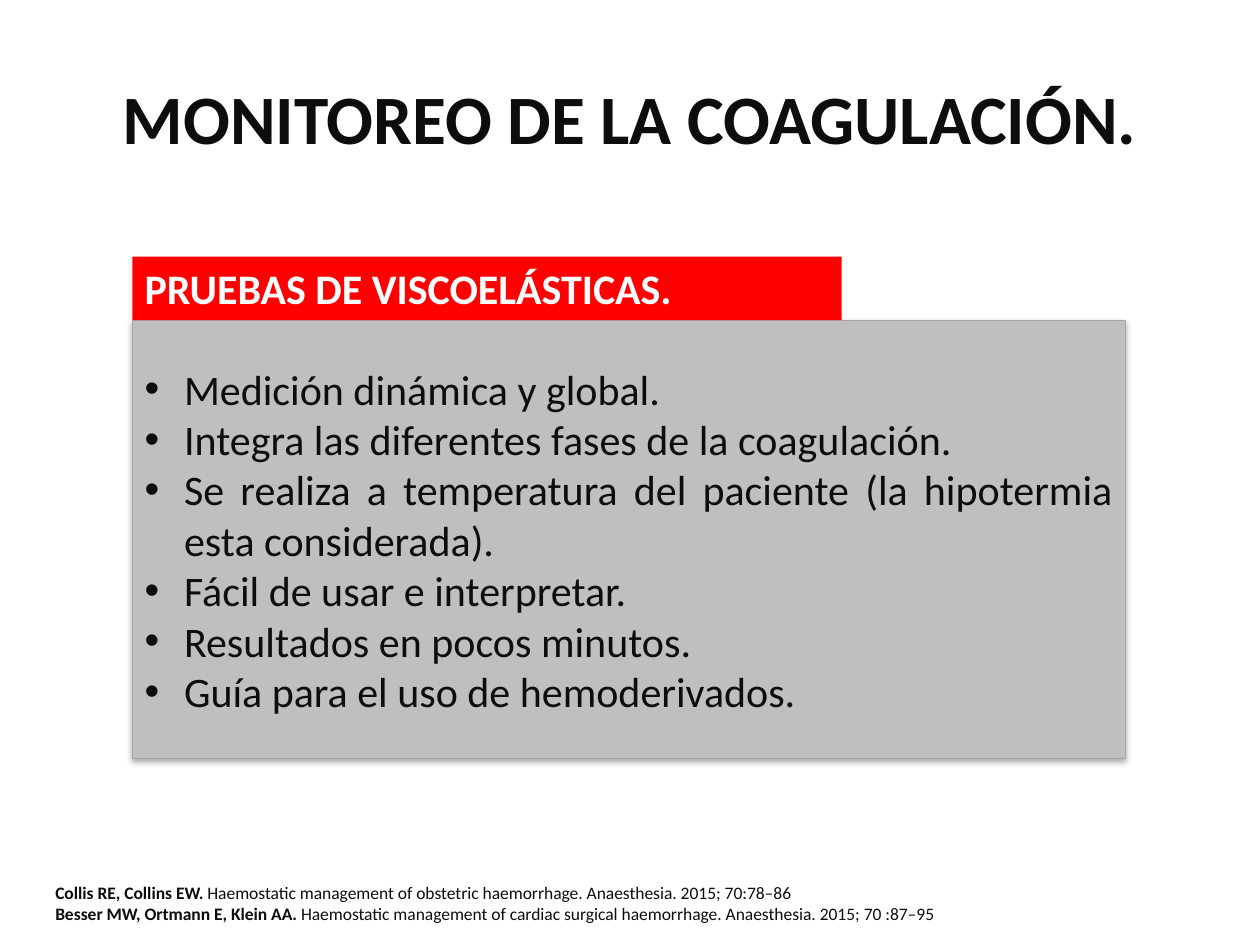
import pptx
import pptx.dml.color
import pptx.enum.shapes
import pptx.enum.text
import pptx.oxml
import pptx.oxml.ns
import pptx.util
from lxml import etree

Pt = pptx.util.Pt
Align = pptx.enum.text.PP_ALIGN
Anchor = pptx.enum.text.MSO_ANCHOR

TITLE = "MONITOREO DE LA COAGULACIÓN."
HEADING = "PRUEBAS DE VISCOELÁSTICAS."
POINTS = [
    "Medición dinámica y global.",
    "Integra las diferentes fases de la coagulación.",
    "Se realiza a temperatura del paciente (la hipotermia esta considerada).",
    "Fácil de usar e interpretar.",
    "Resultados en pocos minutos.",
    "Guía para el uso de hemoderivados.",
]
REFERENCES = [
    ("Collis RE, Collins EW. ",
     "Haemostatic management of obstetric haemorrhage. Anaesthesia. 2015; 70:78–86"),
    ("Besser MW, Ortmann E, Klein AA. ",
     "Haemostatic management of cardiac surgical haemorrhage. Anaesthesia. 2015; 70 :87–95"),
]

THEME = {
    "font": "Calibri",
    "ink": "0D0D0D", "white": "FFFFFF", "red": "FF0000",
    "panel": "BFBFBF", "border": "A6A6A6", "shadow": "000000",
    "title_size": 39.6, "body_size": 24, "reference_size": 10,
}

SLIDE_WIDTH, SLIDE_HEIGHT = 720, 540
TITLE_BOX = (36, 21.6, SLIDE_WIDTH - 2 * 36, 90)
PANEL_LEFT, PANEL_TOP = 75.6, 183
HEADING_HEIGHT = 36.35
HEADING_BOX = (PANEL_LEFT, PANEL_TOP - HEADING_HEIGHT, 405.4, HEADING_HEIGHT)
PANEL_BOX = (PANEL_LEFT, PANEL_TOP, 567.4, 250.6)
REFERENCE_BOX = (24.5, 500.4, 582.5, 39)
BULLET_INDENT = 22.5


def color(name):
    return pptx.dml.color.RGBColor.from_string(THEME[name])


def add_text_box(slide, box):
    return slide.shapes.add_textbox(*map(Pt, box))


def add_rectangle(slide, box, fill, line=None):
    kind = pptx.enum.shapes.MSO_SHAPE.RECTANGLE
    shape = slide.shapes.add_shape(kind, *map(Pt, box))
    shape.shadow.inherit = False
    shape.fill.solid()
    shape.fill.fore_color.rgb = color(fill)
    if line:
        shape.line.color.rgb = color(line)
        shape.line.width = Pt(0.75)
    else:
        shape.line.fill.background()
    return shape


def write(shape, paragraphs, size, ink="ink", align=Align.LEFT, anchor=Anchor.TOP):
    frame = shape.text_frame
    frame.word_wrap = True
    frame.vertical_anchor = anchor
    for index, runs in enumerate(paragraphs):
        paragraph = frame.paragraphs[0] if index == 0 else frame.add_paragraph()
        paragraph.alignment = align
        for text, bold in runs:
            run = paragraph.add_run()
            run.text = text
            run.font.name = THEME["font"]
            run.font.size = Pt(THEME[size])
            run.font.bold = bold
            run.font.color.rgb = color(ink)


def add_bullets(shape):
    for paragraph in shape.text_frame.paragraphs:
        properties = paragraph._p.get_or_add_pPr()
        properties.set("marL", str(Pt(BULLET_INDENT)))
        properties.set("indent", str(-Pt(BULLET_INDENT)))
        font = etree.SubElement(properties, pptx.oxml.ns.qn("a:buFont"))
        font.set("typeface", "Arial")
        bullet = etree.SubElement(properties, pptx.oxml.ns.qn("a:buChar"))
        bullet.set("char", "•")


def add_shadow(shape):
    effects = shape._element.spPr.find(pptx.oxml.ns.qn("a:effectLst"))
    effects.append(pptx.oxml.parse_xml(
        f'<a:outerShdw {pptx.oxml.ns.nsdecls("a")} blurRad="{Pt(3.1)}" '
        f'dist="{Pt(1.8)}" dir="5400000" rotWithShape="0">'
        f'<a:srgbClr val="{THEME["shadow"]}"><a:alpha val="35000"/></a:srgbClr>'
        '</a:outerShdw>'))


def main():
    presentation = pptx.Presentation()
    presentation.slide_width = Pt(SLIDE_WIDTH)
    presentation.slide_height = Pt(SLIDE_HEIGHT)
    slide = presentation.slides.add_slide(presentation.slide_layouts[6])

    title = add_text_box(slide, TITLE_BOX)
    write(title, [[(TITLE, True)]], "title_size",
          align=Align.CENTER, anchor=Anchor.MIDDLE)

    panel = add_rectangle(slide, PANEL_BOX, "panel", "border")
    write(panel, [[(point, False)] for point in POINTS], "body_size",
          align=Align.JUSTIFY, anchor=Anchor.MIDDLE)
    add_bullets(panel)
    add_shadow(panel)

    heading = add_rectangle(slide, HEADING_BOX, "red")
    write(heading, [[(HEADING, True)]], "body_size", ink="white")

    references = add_text_box(slide, REFERENCE_BOX)
    write(references, [[(authors, True), (work, False)] for authors, work in REFERENCES],
          "reference_size")

    presentation.save("out.pptx")


if __name__ == "__main__":
    main()
